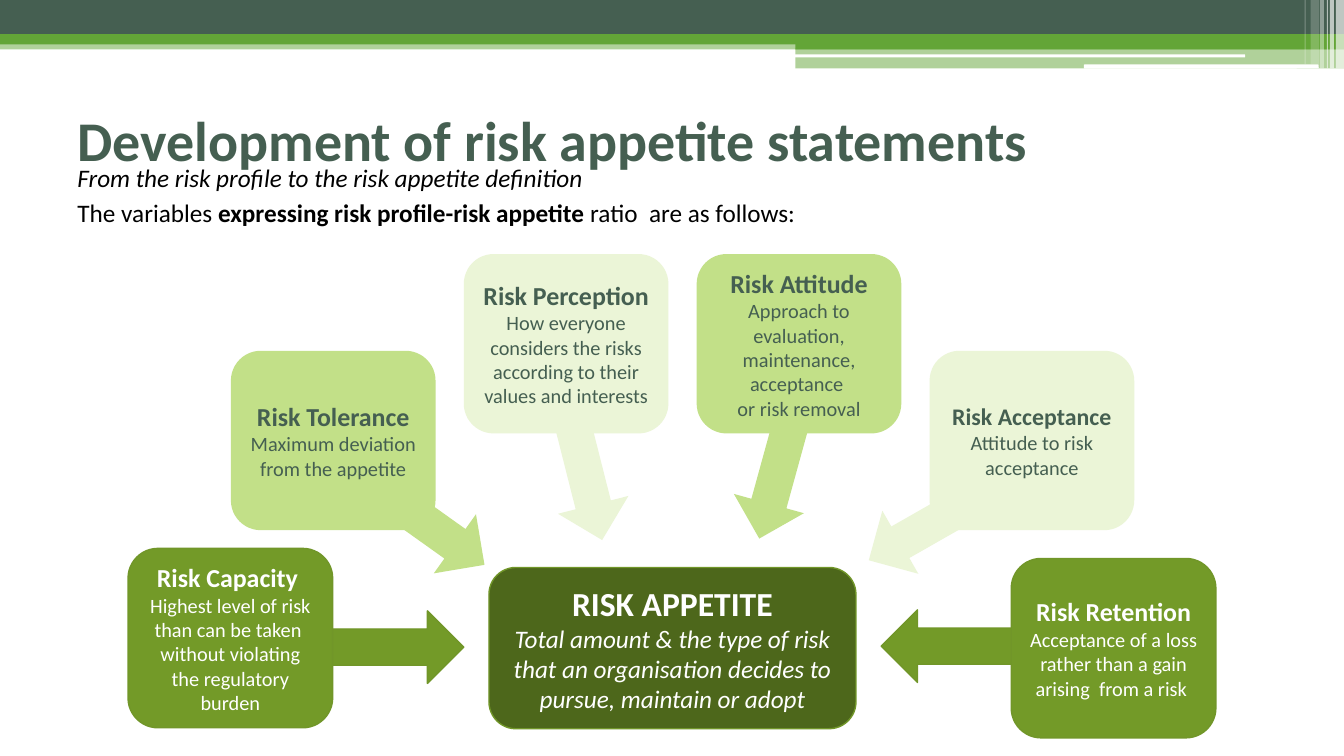
from lxml import etree
from pptx import Presentation, util as u
from pptx.dml.color import RGBColor
from pptx.enum import shapes, text
from pptx.oxml.ns import qn

PX = 9144  # EMU per px, 100 px to the inch
FONT = "Calibri"
WHITE = RGBColor(0xFF, 0xFF, 0xFF)
BLACK = RGBColor(0, 0, 0)
SLATE = RGBColor(0x45, 0x5F, 0x51)
GREEN = RGBColor(0x63, 0xA5, 0x37)
OLIVE = RGBColor(0x73, 0x9A, 0x28)
EDGE = RGBColor(0x71, 0x96, 0x29)
DEEP = RGBColor(0x4D, 0x67, 0x1B)
LIME = RGBColor(0xC2, 0xE0, 0x88)
PALE = RGBColor(0xEB, 0xF5, 0xD7)
KIND = shapes.MSO_SHAPE
BOX_W, BOX_H = 203, 178
ARROW_W, ARROW_H = 177, 72

# left, top, width, height, colour, opacity in percent
BANDS = [
    (0, 40, 1333, 9, GREEN, 50),
    (0, 0, 1333, 34, SLATE, 100),
    (0, 34, 1333, 10, GREEN, 100),
    (789, 39, 544, 10, GREEN, 100),
    (789, 48, 544, 20, GREEN, 50),
]
PILLS = [(788, 54, 447, 3), (1075, 64, 233, 4)]
# left, width, height, opacity in percent
STRIPES = [(1325, 8, 68, 65), (1319, 4, 68, 65), (1316, 1, 68, 60),
           (1309, 4, 68, 40), (1300, 8, 64, 20), (1294, 1, 64, 30)]
# left, top, rotation, fill, line
ARROWS = [
    (874, 605, 180, OLIVE, EDGE),
    (850, 476, 150.3, PALE, None),
    (320, 473, 35.5, LIME, None),
    (487, 414, 75.8, PALE, None),
    (688, 413, 105.4, LIME, None),
    (283, 606, 0, OLIVE, EDGE),
]
# left, top, fill, line, text colour, heading size, paragraphs (heading run first)
VARIABLES = [
    (127, 544, OLIVE, EDGE, WHITE, 18.5, [
        ["Risk Capacity "],
        ["Highest level of risk than can be taken  without violating the regulatory burden"]]),
    (229, 348, LIME, None, SLATE, 18.5, [
        ["Risk Tolerance ", "Maximum deviation from the appetite"]]),
    (460, 252, PALE, None, SLATE, 18.5, [
        ["Risk Perception "],
        ["How everyone considers the risks according to their values and interests"]]),
    (691, 252, LIME, None, SLATE, 18.5, [
        ["Risk Attitude"],
        ["Approach to evaluation, maintenance, acceptance "],
        ["or risk removal"]]),
    (922, 348, PALE, None, SLATE, 17, [
        ["Risk Acceptance ", "Attitude to risk acceptance"]]),
    (1003, 554, OLIVE, EDGE, WHITE, 18.5, [
        ["Risk Retention"],
        ["Acceptance of a loss rather than a gain arising  from a risk "]]),
]


def add_run(p, words, size, color, bold=False, italic=False):
    r = p.add_run()
    r.text = words
    f = r.font
    f.name, f.size, f.bold, f.italic = FONT, u.Pt(size), bold, italic
    f.color.rgb = color


def add_block(s, kind, left, top, width, height, fill, line=None, opacity=100):
    sp = s.shapes.add_shape(kind, *(n * PX for n in (left, top, width, height)))
    sp.shadow.inherit = False
    sp.fill.solid()
    sp.fill.fore_color.rgb = fill
    if opacity < 100:
        color = sp.fill._xPr.find(qn("a:solidFill"))[0]
        etree.SubElement(color, qn("a:alpha"), val=str(opacity * 1000))
    if line is None:
        sp.line.fill.background()
    else:
        sp.line.color.rgb = line
        sp.line.width = u.Pt(1)
    return sp


def add_header(s):
    for left, top, width, height, color, opacity in BANDS:
        add_block(s, KIND.RECTANGLE, left, top, width, height, color, opacity=opacity)
    for pill in PILLS:
        add_block(s, KIND.ROUNDED_RECTANGLE, *pill, WHITE)
    for left, width, height, opacity in STRIPES:
        add_block(s, KIND.RECTANGLE, left, 0, width, height, WHITE, opacity=opacity)


def add_arrow(s, left, top, rotation, fill, line):
    sp = add_block(s, KIND.RIGHT_ARROW, left, top, ARROW_W, ARROW_H, fill, line)
    sp.rotation = rotation


def add_card(s, left, top, width, height, fill, line, color, sizes, paragraphs, italic=False):
    """Rounded box: the first run is a bold heading, all others are body text."""
    sp = add_block(s, KIND.FLOWCHART_ALTERNATE_PROCESS, left, top, width, height, fill, line)
    tf = sp.text_frame
    tf.word_wrap = True
    tf.vertical_anchor = text.MSO_ANCHOR.MIDDLE
    for i, runs in enumerate(paragraphs):
        p = tf.add_paragraph() if i else tf.paragraphs[0]
        p.alignment = text.PP_ALIGN.CENTER
        for j, words in enumerate(runs):
            heading = i == j == 0
            add_run(p, words, sizes[0 if heading else 1], color,
                    bold=heading, italic=italic and not heading)


def add_title(s, words):
    title = s.shapes.title
    title.left, title.top, title.width, title.height = (n * PX for n in (67, 80, 1200, 117))
    tf = title.text_frame
    tf.vertical_anchor = text.MSO_ANCHOR.MIDDLE
    p = tf.paragraphs[0]
    p.alignment = text.PP_ALIGN.LEFT
    add_run(p, words, 40, SLATE, bold=True)


def add_text(s, left, top, width, height, wrap=True):
    """Add an empty text box and return its first paragraph."""
    tf = s.shapes.add_textbox(*(n * PX for n in (left, top, width, height))).text_frame
    tf.word_wrap = wrap
    tf.auto_size = text.MSO_AUTO_SIZE.SHAPE_TO_FIT_TEXT
    return tf.paragraphs[0]


def add_intro(s):
    p = add_text(s, 67, 156, 527, 40, wrap=False)
    add_run(p, "From the risk profile to the risk appetite definition", 18, BLACK, italic=True)
    p = add_text(s, 67, 176, 786, 56)
    p.alignment = text.PP_ALIGN.JUSTIFY
    p.line_spacing = 1.5
    p.space_after = u.Pt(6)
    add_run(p, "The variables ", 18, BLACK)
    add_run(p, "expressing risk profile-risk appetite ", 18, BLACK, bold=True)
    add_run(p, "ratio  are as follows:", 18, BLACK)


def main():
    prs = Presentation()
    prs.slide_width, prs.slide_height = 1333 * PX, 750 * PX
    s = prs.slides.add_slide(prs.slide_layouts[5])
    add_header(s)
    for arrow in ARROWS:
        add_arrow(s, *arrow)
    add_title(s, "Development of risk appetite statements")
    add_intro(s)
    add_card(s, 485, 563, 364, 160, DEEP, EDGE, WHITE, (24, 18), [
        ["RISK APPETITE"],
        ["Total amount & the type of risk that an organisation decides to "
         "pursue, maintain or adopt"]], italic=True)
    for left, top, fill, line, color, size, paragraphs in VARIABLES:
        add_card(s, left, top, BOX_W, BOX_H, fill, line, color, (size, 14.5), paragraphs)
    prs.save("out.pptx")


if __name__ == "__main__":
    main()
